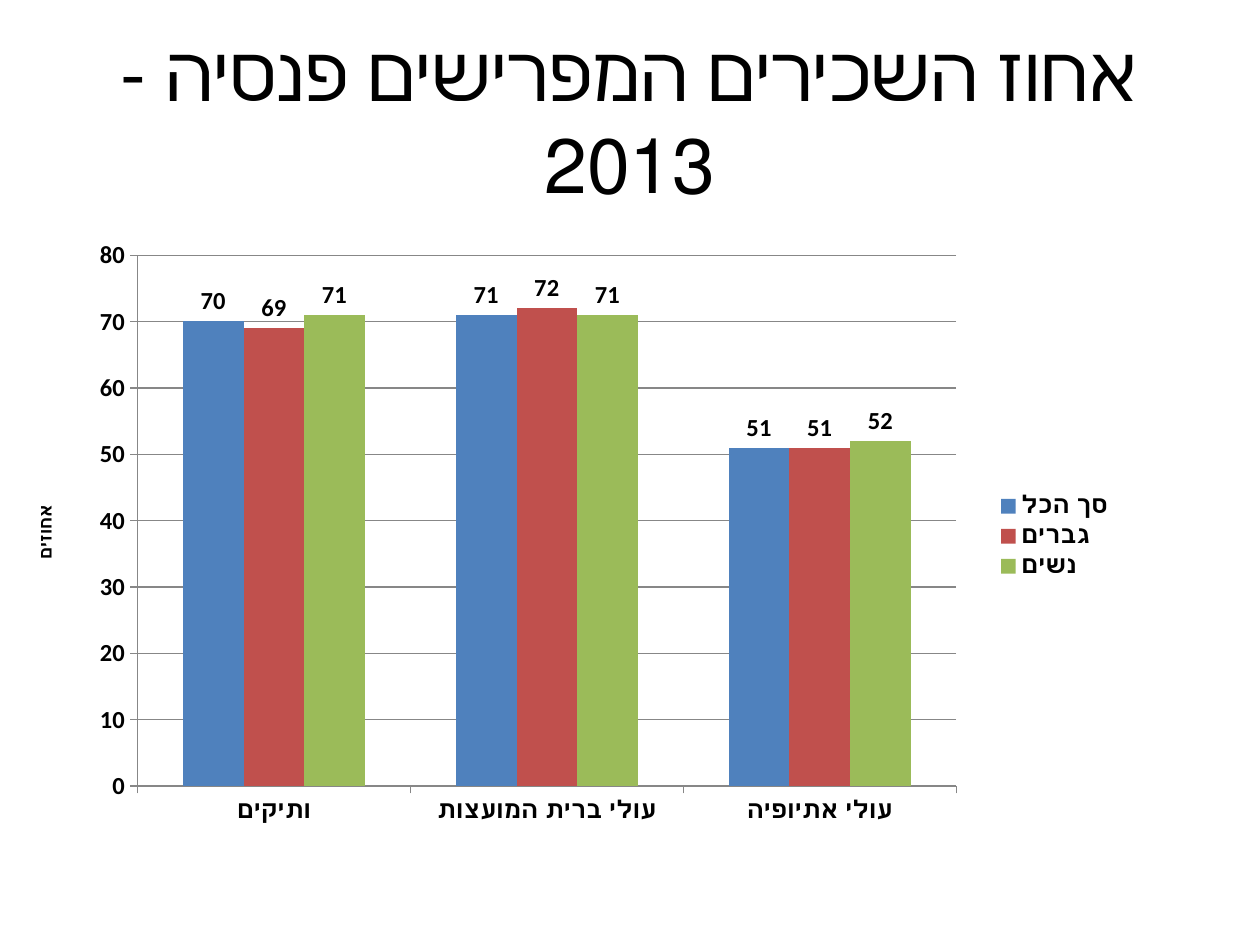
from pptx import Presentation, util as u
from pptx.chart.data import CategoryChartData
from pptx.dml.color import RGBColor as Rgb
from pptx.enum import chart as ch, text as tx
from pptx.oxml import parse_xml
from pptx.oxml.ns import nsdecls

theme = {
    "font": "Calibri", "ink": Rgb.from_string("000000"),
    "grid": Rgb.from_string("878787"),
    "bars": ["4F81BD", "C0504D", "9BBB59"],
    "title": 44, "chart": 14, "axis": 10,
}

deck = Presentation()
deck.slide_width, deck.slide_height = u.Inches(10), u.Inches(7.5)
slide = deck.slides.add_slide(deck.slide_layouts[6])
wide, high = deck.slide_width, deck.slide_height


def area(left, top, width, height):
    """Turn shares of the slide into lengths."""
    return [round(n) for n in (left * wide, top * high, width * wide, height * high)]


def style(font, size, bold=False):
    font.name, font.size, font.bold = theme["font"], u.Pt(size), bold
    font.color.rgb = theme["ink"]


# Chart data
data = CategoryChartData(number_format="0")
data.categories = ["ותיקים", "עולי ברית המועצות", "עולי אתיופיה"]
for name, vals in [("סך הכל", (70, 71, 51)),
                   ("גברים", (69, 72, 51)),
                   ("נשים", (71, 71, 52))]:
    data.add_series(name, vals)

# Clustered columns
chart = slide.shapes.add_chart(ch.XL_CHART_TYPE.COLUMN_CLUSTERED,
                               *area(0.05, 0.237, 0.844, 0.661), data).chart
chart.has_title = False
style(chart.font, theme["chart"], True)
plot = chart.plots[0]
plot.gap_width, plot.overlap, plot.vary_by_categories = 150, 0, False
for row, color in zip(plot.series, theme["bars"]):
    row.format.fill.solid()
    row.format.fill.fore_color.rgb = Rgb.from_string(color)
    row.invert_if_negative = False
    marks = row.data_labels
    marks.show_value = True
    marks.number_format, marks.number_format_is_linked = "0", False
    marks.position = ch.XL_LABEL_POSITION.OUTSIDE_END

# Axes, grid and legend
rise = chart.value_axis
rise.minimum_scale, rise.maximum_scale, rise.major_unit = 0, 80, 10
rise.has_major_gridlines = True
rise.tick_labels.number_format = "0"
rise.tick_labels.number_format_is_linked = False
for axis in (rise, chart.category_axis):
    axis.major_tick_mark = ch.XL_TICK_MARK.OUTSIDE
    axis.minor_tick_mark = ch.XL_TICK_MARK.NONE
for part in (rise, chart.category_axis, rise.major_gridlines):
    part.format.line.color.rgb = theme["grid"]
    part.format.line.width = u.Pt(0.75)
chart.has_legend = True
chart.legend.position = ch.XL_LEGEND_POSITION.RIGHT
chart.legend.include_in_layout = False

# Fixed plot area inside the chart
frame = chart._chartSpace.chart.plotArea
for old in frame.findall("{*}layout"):
    frame.remove(old)
sides = {"x": 0.07, "y": 0.05, "w": 0.77, "h": 0.85}
frame.insert(0, parse_xml(
    f'<c:layout {nsdecls("c")}><c:manualLayout><c:layoutTarget val="inner"/>'
    '<c:xMode val="edge"/><c:yMode val="edge"/>'
    + "".join(f'<c:{key} val="{val}"/>' for key, val in sides.items())
    + "</c:manualLayout></c:layout>"))

# Slide title and upright axis caption, both right to left
for words, place, size, bold, turn in [
        ("אחוז השכירים המפרישים פנסיה - 2013",
         (0.05, 0.04, 0.9, 0.167), theme["title"], False, "horz"),
        ("אחוזים", (0.02, 0.437, 0.031, 0.252), theme["axis"], True, "vert270")]:
    body = slide.shapes.add_textbox(*area(*place)).text_frame
    body.text = words
    body.word_wrap = True
    body.vertical_anchor = tx.MSO_ANCHOR.MIDDLE
    body._txBody.bodyPr.set("vert", turn)
    line = body.paragraphs[0]
    line.alignment = tx.PP_ALIGN.CENTER
    line._p.get_or_add_pPr().set("rtl", "1")
    style(line.runs[0].font, size, bold)

deck.save("out.pptx")
